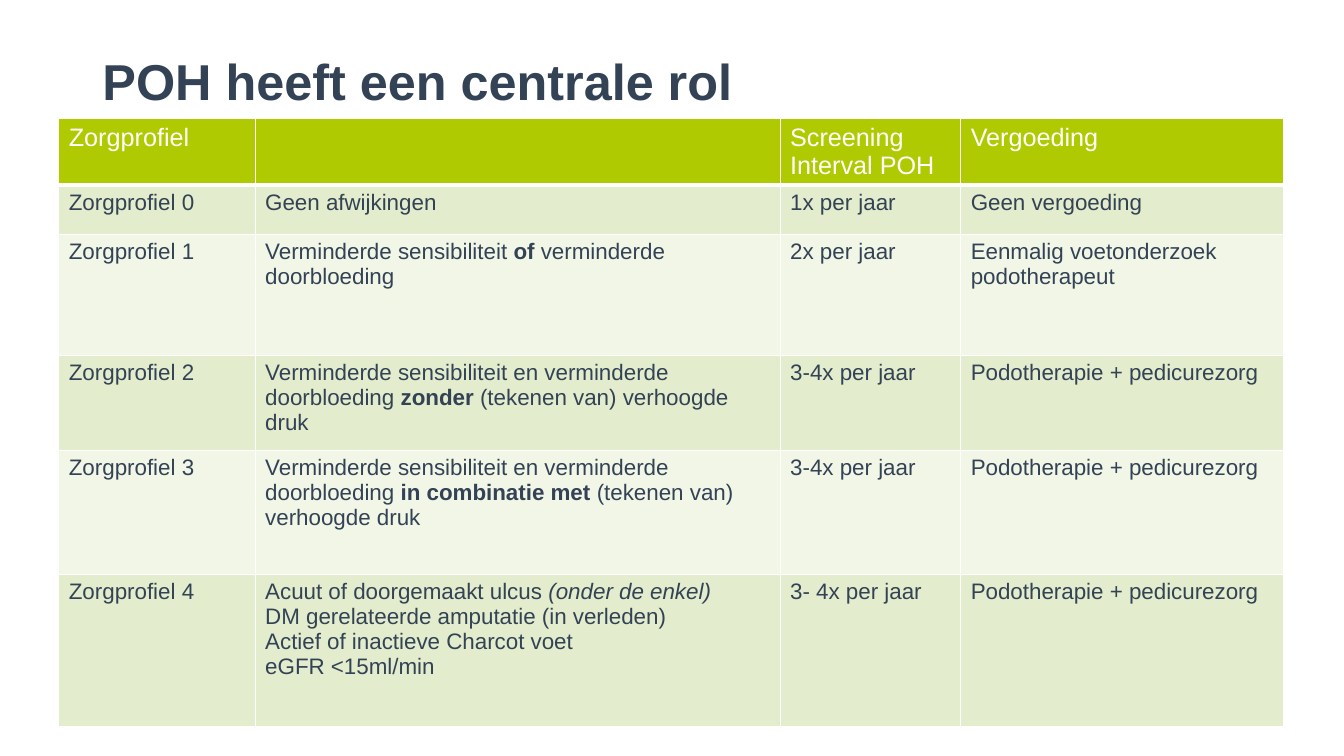
from lxml import etree
from pptx import Presentation
from pptx.dml.color import RGBColor
from pptx.enum.text import MSO_ANCHOR
from pptx.oxml.ns import qn
from pptx.util import Pt

MIDDLE = MSO_ANCHOR.MIDDLE
PX = 9525
COLORS = {"ink": "334355", "white": "FFFFFF", "head": "AFCA00",
          "dark": "E3ECCC", "light": "F2F6E7"}


def style(font, color, **values):
    font.color.rgb = RGBColor.from_string(COLORS[color])
    for key, value in {"name": "Arial", **values}.items():
        setattr(font, key, value)


def border(cell, widths):
    props = cell._tc.get_or_add_tcPr()
    for side, width in widths.items():
        line = etree.SubElement(props, qn("a:ln" + side), w=str(Pt(width)))
        fill = etree.SubElement(line, qn("a:solidFill"))
        etree.SubElement(fill, qn("a:srgbClr"), val=COLORS["white"])


deck = Presentation()
deck.slide_width, deck.slide_height = 1280 * PX, 720 * PX
slide = deck.slides.add_slide(deck.slide_layouts[5])

title = slide.shapes.title
for key, value in {"left": 88, "top": 48, "width": 1019, "height": 65}.items():
    setattr(title, key, value * PX)
title.text_frame.text = "POH heeft een centrale rol"
title.text_frame.vertical_anchor = MIDDLE
title.text_frame.word_wrap = True
lead = title.text_frame.paragraphs[0]
lead.alignment = 1
lead.line_spacing = 0.9
style(lead.runs[0].font, "ink", size=Pt(36), bold=True)

both = "Verminderde sensibiliteit en verminderde doorbloeding "
care = "Podotherapie + pedicurezorg"
rows = [
    ["Zorgprofiel", "", "Screening\nInterval POH", "Vergoeding"],
    ["Zorgprofiel 0", "Geen afwijkingen", "1x per jaar", "Geen vergoeding"],
    ["Zorgprofiel 1",
     ["Verminderde sensibiliteit ", ("bold", "of"), " verminderde doorbloeding"],
     "2x per jaar", "Eenmalig voetonderzoek podotherapeut"],
    ["Zorgprofiel 2",
     [both, ("bold", "zonder"), " (tekenen van) verhoogde druk"],
     "3-4x per jaar", care],
    ["Zorgprofiel 3",
     [both, ("bold", "in combinatie met "), "(tekenen van) verhoogde druk"],
     "3-4x per jaar", care],
    ["Zorgprofiel 4",
     ["Acuut of doorgemaakt ulcus ", ("italic", "(onder de enkel)"),
      "\nDM gerelateerde amputatie (in verleden)"
      "\nActief of inactieve Charcot voet\neGFR <15ml/min"],
     "3- 4x per jaar", care],
]
widths = [187, 500, 172, 308]
heights = [63, 47, 115, 91, 118, 145]

frame = slide.shapes.add_table(len(rows), len(widths), 56 * PX, 113 * PX,
                               sum(widths) * PX, sum(heights) * PX)
table = frame.table
table.first_row = table.horz_banding = False
for col, width in zip(table.columns, widths):
    col.width = width * PX
for row, height in zip(table.rows, heights):
    row.height = height * PX

for r, row in enumerate(rows):
    head = r == 0
    band = "head" if head else "dark" if r % 2 else "light"
    color, size = ("white", 18) if head else ("ink", 16)
    for c, parts in enumerate(row):
        cell = table.cell(r, c)
        border(cell, {"L": 1, "R": 1, "T": 1, "B": 3 if head else 1})
        cell.fill.solid()
        cell.fill.fore_color.rgb = RGBColor.from_string(COLORS[band])
        para = cell.text_frame.paragraphs[0]
        for part in [parts] if isinstance(parts, str) else parts:
            mark, text = ("", part) if isinstance(part, str) else part
            for n, line in enumerate(text.split("\n")):
                if n:
                    para = cell.text_frame.add_paragraph()
                if line:
                    run = para.add_run()
                    run.text = line
                    style(run.font, color, size=Pt(size),
                          bold=mark == "bold", italic=mark == "italic")

deck.save("out.pptx")
